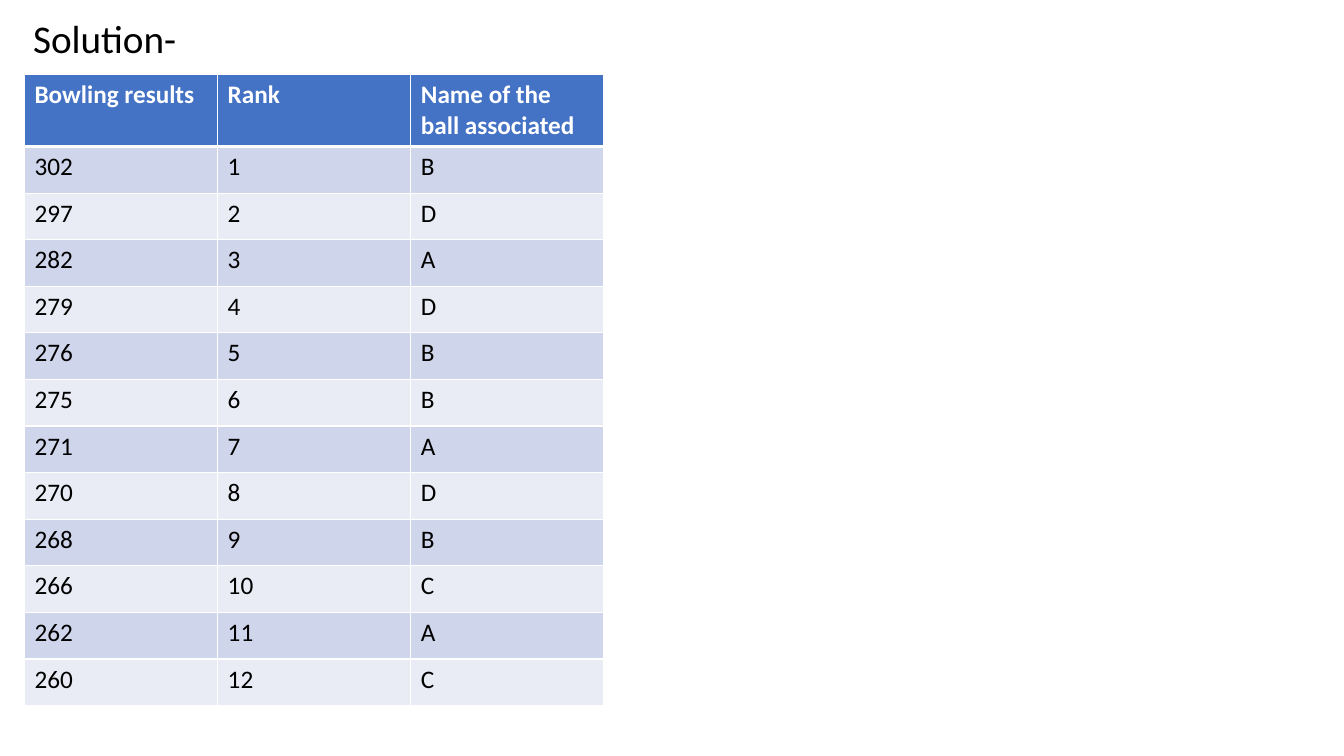
from lxml.etree import SubElement
from pptx import Presentation
from pptx.dml.color import RGBColor
from pptx.enum.text import MSO_AUTO_SIZE
from pptx.oxml.ns import qn
from pptx.util import Pt

COLORS = {
    "text": "000000",
    "white": "FFFFFF",
    "header": "4472C4",
    "odd": "CFD5EA",
    "even": "E9EBF5",
}
HEADINGS = ("Bowling results", "Rank", "Name of the ball associated")
SCORES = (302, 297, 282, 279, 276, 275, 271, 270, 268, 266, 262, 260)
BALLS = "BDADBBADBCAC"


class SlideBuilder:
    font = "Calibri"

    def __init__(self, slide):
        self.slide = slide

    def style(self, p, size, color, bold=False):
        p.font.name = self.font
        p.font.size = Pt(size)
        p.font.bold = bold
        p.font.color.rgb = RGBColor.from_string(COLORS[color])

    def text(self, text, left, top, width, height, size):
        tf = self.slide.shapes.add_textbox(Pt(left), Pt(top), Pt(width), Pt(height)).text_frame
        tf.word_wrap = True
        tf.auto_size = MSO_AUTO_SIZE.SHAPE_TO_FIT_TEXT
        tf.text = text
        self.style(tf.paragraphs[0], size, "text")

    def border(self, cell, side, width):
        ln = SubElement(cell._tc.get_or_add_tcPr(), qn(f"a:ln{side}"), w=str(Pt(width)))
        fill = SubElement(ln, qn("a:solidFill"))
        SubElement(fill, qn("a:srgbClr"), val=COLORS["white"])

    def cell(self, cell, text, row, size):
        for side in "LRTB":
            thick = (row, side) in ((0, "B"), (1, "T"))
            self.border(cell, side, 3 if thick else 1)
        band = "header" if row == 0 else "odd" if row % 2 else "even"
        cell.fill.solid()
        cell.fill.fore_color.rgb = RGBColor.from_string(COLORS[band])
        cell.text = str(text)
        self.style(cell.text_frame.paragraphs[0], size, "white" if row == 0 else "text", row == 0)

    def table(self, rows, left, top, col_width, row_height, size):
        cols = len(rows[0])
        table = self.slide.shapes.add_table(
            len(rows), cols, Pt(left), Pt(top), Pt(col_width * cols), Pt(row_height * len(rows))
        ).table
        for col in table.columns:
            col.width = Pt(col_width)
        for i, values in enumerate(rows):
            table.rows[i].height = Pt(row_height)
            for j, value in enumerate(values):
                self.cell(table.cell(i, j), value, i, size)


def main():
    prs = Presentation()
    prs.slide_width, prs.slide_height = Pt(960), Pt(540)
    builder = SlideBuilder(prs.slides.add_slide(prs.slide_layouts[6]))
    results = [(score, rank, ball) for rank, (score, ball) in enumerate(zip(SCORES, BALLS), 1)]
    builder.table([HEADINGS, *results], 17.5, 53.5, 138, 33.3, 18)
    builder.text("Solution-", 16.5, 6.5, 705, 41, 28)
    prs.save("out.pptx")


if __name__ == "__main__":
    main()
